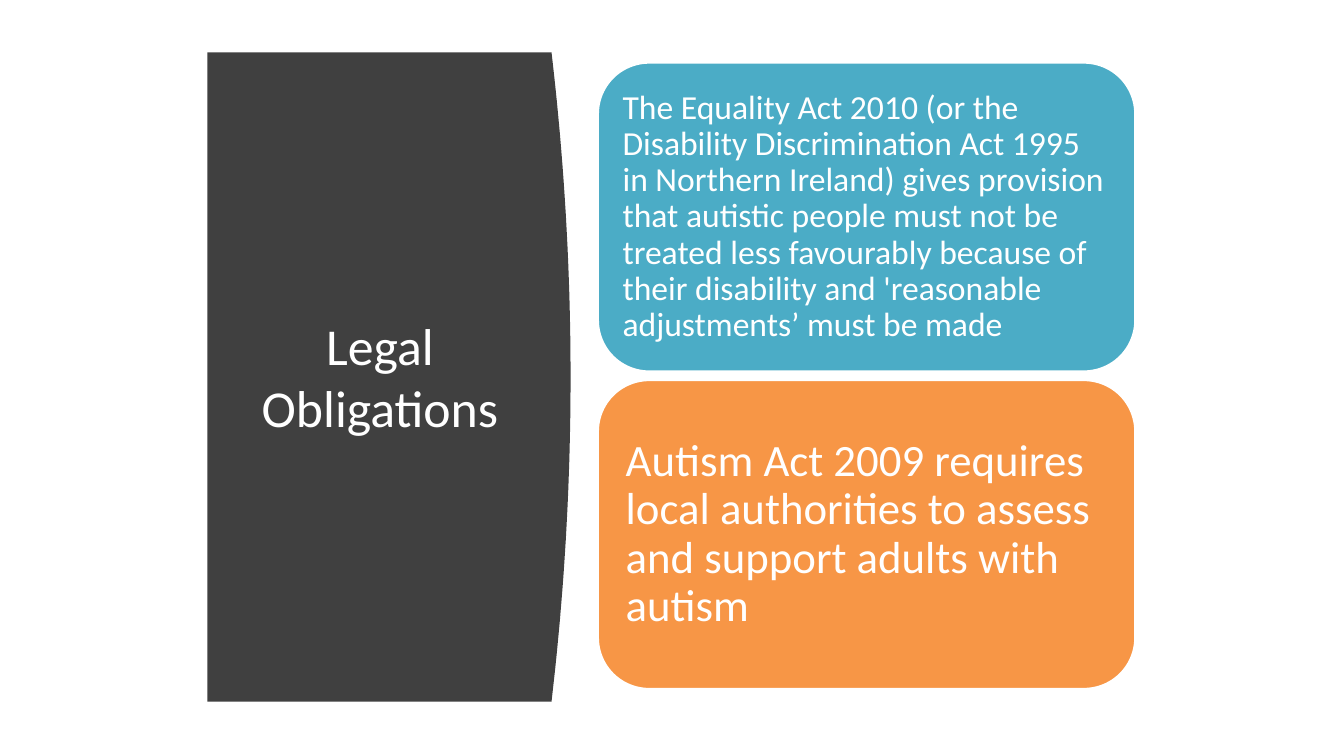
import pptx
import pptx.util
import pptx.dml.color
import pptx.enum.shapes
import pptx.enum.text

Cm, Pt = pptx.util.Cm, pptx.util.Pt

TITLE = "Legal Obligations"
# wording, fill, text size, inset in cm
CARDS = [
    ("The Equality Act 2010 (or the Disability Discrimination Act 1995 in "
     "Northern Ireland) gives provision that autistic people must not be "
     "treated less favourably because of their disability and 'reasonable "
     "adjustments’ must be made", "4BACC6", 24, 0.25),
    ("Autism Act 2009 requires local authorities to assess and support "
     "adults with autism", "F79646", 32, 0.33),
]
WHITE, DARK = "FFFFFF", "404040"

# Lengths in cm
PANEL = {"left": 5.23, "top": 1.32, "width": 8.67, "height": 16.36}
BULGE, STEPS = 0.48, 40
HEAD = {"left": 6.02, "top": 2.82, "width": 7.11, "height": 13.31}
CARD = {"left": 15.06, "top": 1.57, "width": 13.56, "height": 7.8}
GAP = 0.2


def color(code):
    return pptx.dml.color.RGBColor.from_string(code)


def paint(shape, code):
    shape.shadow.inherit = False
    shape.fill.solid()
    shape.fill.fore_color.rgb = color(code)


def write(shape, words, size, align, inset, space):
    frame = shape.text_frame
    frame.text = words
    frame.word_wrap = True
    frame.auto_size = pptx.enum.text.MSO_AUTO_SIZE.NONE
    frame.vertical_anchor = pptx.enum.text.MSO_ANCHOR.MIDDLE
    for side in ("left", "top", "right", "bottom"):
        setattr(frame, "margin_" + side, Cm(inset))
    para = frame.paragraphs[0]
    para.alignment = align
    para.line_spacing = space
    font = para.runs[0].font
    for name, value in {"name": "Calibri", "size": Pt(size)}.items():
        setattr(font, name, value)
    font.color.rgb = color(WHITE)


def add_panel(slide):
    """Draw the dark panel, its right side bowed out as a parabola."""
    left, top = PANEL["left"], PANEL["top"]
    right, tall = left + PANEL["width"], PANEL["height"]
    curve = []
    for step in range(STEPS + 1):
        part = step / STEPS
        bow = BULGE * (1 - (2 * part - 1) ** 2)
        curve.append((Cm(right + bow), Cm(top + tall * part)))
    form = slide.shapes.build_freeform(Cm(left), Cm(top))
    form.add_line_segments(curve + [(Cm(left), Cm(top + tall))], close=True)
    panel = form.convert_to_shape()
    paint(panel, DARK)
    panel.line.fill.background()


def add_title(slide):
    title = slide.shapes.title
    for name, value in HEAD.items():
        setattr(title, name, Cm(value))
    write(title, TITLE, 37, pptx.enum.text.PP_ALIGN.CENTER, 0.25, 1.0)
    # Bring the title in front of the panel
    slide.shapes.element.append(title.element)


def add_cards(slide):
    for row, (words, fill, size, inset) in enumerate(CARDS):
        top = CARD["top"] + row * (CARD["height"] + GAP)
        card = slide.shapes.add_shape(
            pptx.enum.shapes.MSO_SHAPE.ROUNDED_RECTANGLE,
            Cm(CARD["left"]), Cm(top), Cm(CARD["width"]), Cm(CARD["height"]))
        paint(card, fill)
        card.line.color.rgb = color(WHITE)
        card.line.width = Pt(2)
        write(card, words, size, pptx.enum.text.PP_ALIGN.LEFT, inset, 0.9)


def main():
    deck = pptx.Presentation()
    deck.slide_width, deck.slide_height = Cm(33.87), Cm(19.05)
    slide = deck.slides.add_slide(deck.slide_layouts[5])
    add_panel(slide)
    add_title(slide)
    add_cards(slide)
    deck.save("out.pptx")


if __name__ == "__main__":
    main()
